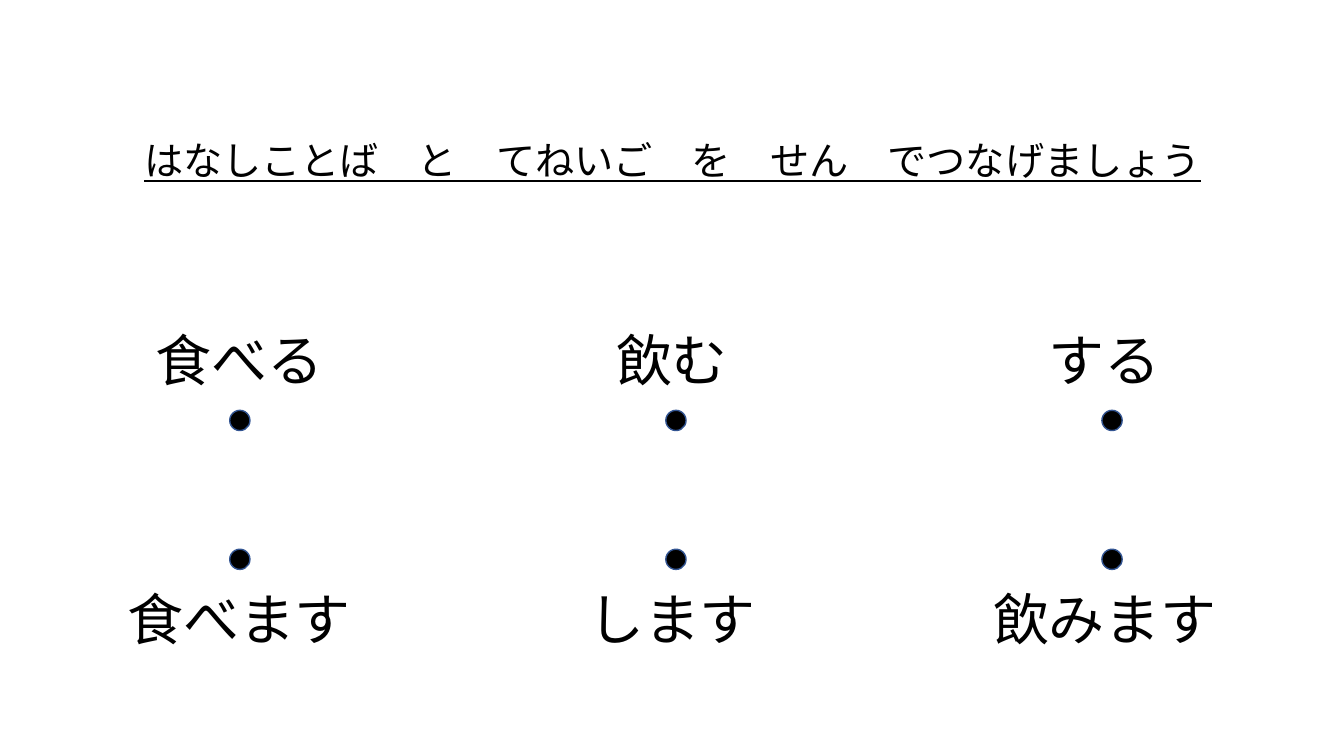
from pptx import Presentation
from pptx.dml.color import RGBColor
from pptx.enum.shapes import MSO_SHAPE
from pptx.enum.text import MSO_ANCHOR, MSO_AUTO_SIZE, PP_ALIGN
from pptx.oxml.ns import qn
from pptx.util import Cm, Pt
from lxml.etree import SubElement

FONT = "Noto Sans CJK JP"
INSTRUCTION = "はなしことば　と　てねいご　を　せん　でつなげましょう"
PLAIN_VERBS = ["食べる", "飲む", "する"]
POLITE_VERBS = ["食べます", "します", "飲みます"]

WORD_LEFT, WORD_STEP = 2.29, 10.91
WORD_WIDTH, WORD_HEIGHT = 7.47, 1.96
DOT_LEFT, DOT_STEP, DOT_SIZE = 5.79, 10.99, 0.51


def colour(hex_code):
    return RGBColor.from_string(hex_code)


def write_centred(frame, text, size):
    frame.word_wrap = True
    frame.vertical_anchor = MSO_ANCHOR.TOP
    paragraph = frame.paragraphs[0]
    paragraph.alignment = PP_ALIGN.CENTER
    run = paragraph.add_run()
    run.text = text
    run.font.size = Pt(size)
    run.font.color.rgb = colour("000000")
    run.font.name = FONT
    # Japanese glyphs take their typeface from a:ea
    SubElement(run.font._element, qn("a:ea"), typeface=FONT)
    return paragraph


def add_instruction(slide):
    title = slide.shapes.title
    title.left, title.top = Cm(2.67), Cm(3.43)
    title.width, title.height = Cm(28.55), Cm(2.54)
    paragraph = write_centred(title.text_frame, INSTRUCTION, 28)
    title.text_frame.auto_size = MSO_AUTO_SIZE.NONE
    paragraph.line_spacing = 0.9
    paragraph.space_before = Pt(10)
    paragraph.runs[0].font.underline = True


def add_word(slide, text, left, top):
    word = slide.shapes.add_textbox(Cm(left), Cm(top), Cm(WORD_WIDTH), Cm(WORD_HEIGHT))
    write_centred(word.text_frame, text, 40)
    word.text_frame.auto_size = MSO_AUTO_SIZE.SHAPE_TO_FIT_TEXT


def add_dot(slide, left, top):
    dot = slide.shapes.add_shape(
        MSO_SHAPE.FLOWCHART_CONNECTOR, Cm(left), Cm(top), Cm(DOT_SIZE), Cm(DOT_SIZE)
    )
    dot.shadow.inherit = False
    dot.fill.solid()
    dot.fill.fore_color.rgb = colour("000000")
    dot.line.color.rgb = colour("325491")
    dot.line.width = Pt(1)


def add_verb_row(slide, verbs, word_top, dot_top):
    for column, verb in enumerate(verbs):
        add_word(slide, verb, WORD_LEFT + column * WORD_STEP, word_top)
        add_dot(slide, DOT_LEFT + column * DOT_STEP, dot_top)


def main():
    deck = Presentation()
    deck.slide_width, deck.slide_height = Cm(33.87), Cm(19.05)
    slide = deck.slides.add_slide(deck.slide_layouts[5])
    add_instruction(slide)
    add_verb_row(slide, PLAIN_VERBS, word_top=8.08, dot_top=10.34)
    add_verb_row(slide, POLITE_VERBS, word_top=14.6, dot_top=13.84)
    deck.save("out.pptx")


if __name__ == "__main__":
    main()
